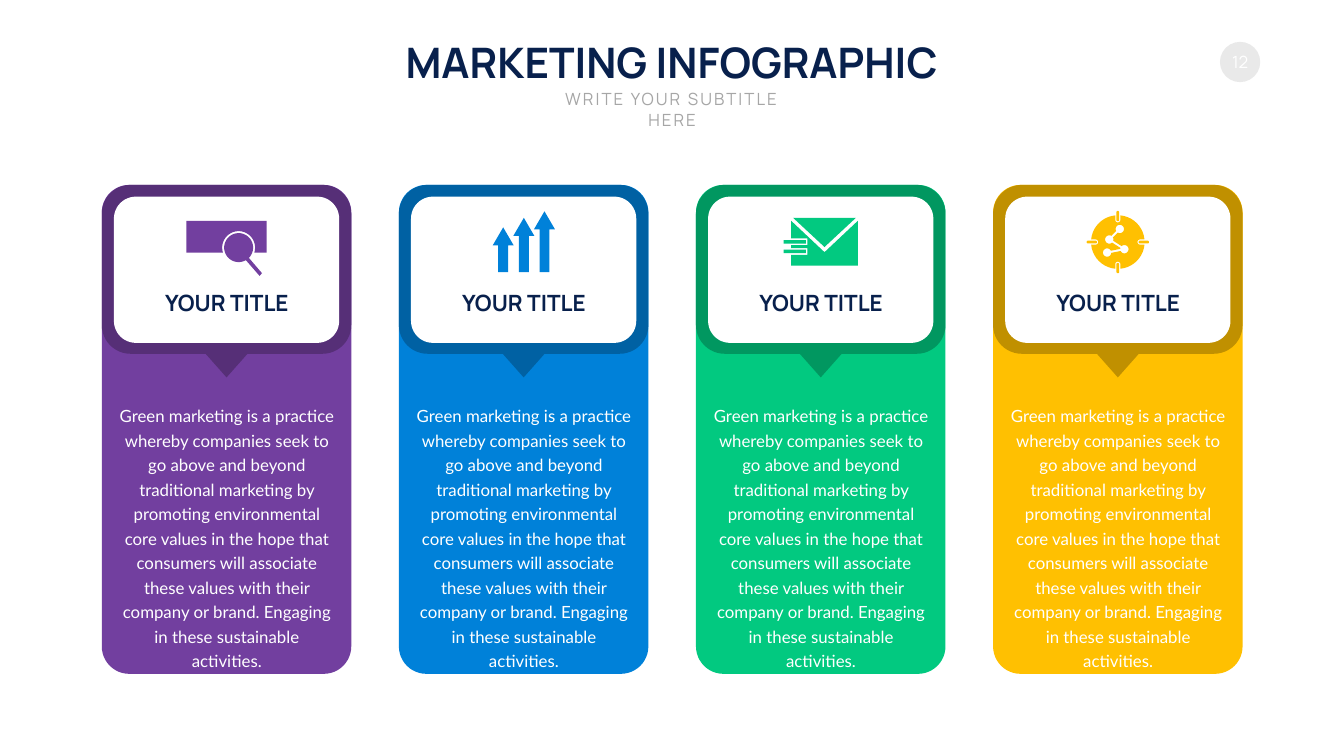
from math import asin, cos, degrees, radians, sin

from pptx import Presentation
from pptx.dml.color import RGBColor
from pptx.enum.shapes import MSO_SHAPE
from pptx.enum.text import MSO_ANCHOR, MSO_AUTO_SIZE, PP_ALIGN
from pptx.util import Cm, Pt

ROUNDED, TRIANGLE, OVAL = MSO_SHAPE.ROUNDED_RECTANGLE, MSO_SHAPE.ISOSCELES_TRIANGLE, MSO_SHAPE.OVAL
TOP, MIDDLE = MSO_ANCHOR.TOP, MSO_ANCHOR.MIDDLE
CENTER = PP_ALIGN.CENTER
GROW = MSO_AUTO_SIZE.SHAPE_TO_FIT_TEXT

THEME = {
    "white": "FFFFFF",
    "badge": "E9E9E9",
    "cards": [("723F9F", "562F77"), ("0081D9", "0061A3"),
              ("02C980", "019760"), ("FFC001", "C09000")],
    "title": {"name": "Manrope", "size": Pt(60), "bold": True, "color": "08204C"},
    "subtitle": {"name": "Manrope", "size": Pt(24), "bold": False, "color": "A6A6A6"},
    "card_title": {"name": "Manrope", "size": Pt(32), "bold": True, "color": "08204C"},
    "body": {"name": "Lato", "size": Pt(24), "bold": False, "color": "FFFFFF"},
    "number": {"name": "Manrope", "size": Pt(24), "bold": False, "color": "FFFFFF"},
}
BODY = (
    "Green marketing is a practice whereby companies seek to go above and beyond "
    "traditional marketing by promoting environmental core values in the hope that "
    "consumers will associate these values with their company or brand. Engaging in "
    "these sustainable activities."
)
FIRST_LEFT, CARD_PITCH, CARD_WIDTH = 5.13, 14.97, 12.57
ICON_MIDDLE = 12.2


def arc(center_x, center_y, radius, start, end):
    """Points along an arc; degrees run clockwise from the right."""
    steps = max(4, round(abs(end - start) / 8))
    angles = [radians(start + (end - start) * i / steps) for i in range(steps + 1)]
    return [(center_x + radius * cos(a), center_y + radius * sin(a)) for a in angles]


def add_text(box, text, style, wrap, anchor=TOP, line_spacing=None):
    """Add a centred, one-paragraph text box; box is in centimetres."""
    shape = slide.shapes.add_textbox(*map(Cm, box))
    frame = shape.text_frame
    frame_format = {"word_wrap": wrap, "auto_size": GROW, "vertical_anchor": anchor}
    for name, value in frame_format.items():
        setattr(frame, name, value)
    paragraph = frame.paragraphs[0]
    paragraph.alignment = CENTER
    paragraph.line_spacing = line_spacing
    run = paragraph.add_run()
    run.text = text
    for name, value in THEME[style].items():
        if name == "color":
            run.font.color.rgb = RGBColor.from_string(value)
        else:
            setattr(run.font, name, value)
    return run


presentation = Presentation()
presentation.slide_width, presentation.slide_height = Cm(67.72), Cm(38.1)
slide = presentation.slides.add_slide(presentation.slide_layouts[6])

# Panels: kind, left, top, width, height, fill, corner, rotation
panels = [(OVAL, 61.47, 2.11, 2.03, 2.03, THEME["badge"], None, 0)]
for index, (color, dark) in enumerate(THEME["cards"]):
    left = FIRST_LEFT + index * CARD_PITCH
    panels += [
        (ROUNDED, left, 9.32, CARD_WIDTH, 24.64, color, 0.11, 0),
        (ROUNDED, left, 9.32, CARD_WIDTH, 8.51, dark, 0.17, 0),
        (ROUNDED, left + 0.61, 9.91, 11.35, 7.37, THEME["white"], 0.15, 0),
        (TRIANGLE, left + 5.23, 17.83, 2.11, 1.19, dark, None, 180),
    ]
for kind, left, top, width, height, fill, corner, rotation in panels:
    shape = slide.shapes.add_shape(kind, Cm(left), Cm(top), Cm(width), Cm(height))
    shape.shadow.inherit = False
    shape.fill.solid()
    shape.fill.fore_color.rgb = RGBColor.from_string(fill)
    shape.line.fill.background()
    shape.rotation = rotation
    if corner is not None:
        shape.adjustments[0] = corner

# Icon outlines in centimetres around the icon centre
search = [
    arc(0.61, 0.28, 0.73, 60, 405) + [(1.79, 1.57), (1.66, 1.7)],
    [(-2.02, 0.53), (-2.02, -1.07), (2.02, -1.07), (2.02, 0.53)]
    + arc(0.61, 0.28, 0.83, 17.5, -197.5),
]

arrows = []
for column, tip in enumerate((-0.74, -1.22, -1.55)):
    x = -1.03 + 1.04 * column
    neck = tip + 0.91
    arrows.append([(x, tip), (x + 0.53, neck), (x + 0.25, neck), (x + 0.25, 1.52),
                   (x - 0.25, 1.52), (x - 0.25, neck), (x - 0.53, neck)])

envelope = [
    [(-1.39, -1.22), (1.77, -1.22), (0.19, 0.25)],
    [(-1.49, -1.07), (0.19, 0.51), (1.87, -1.07), (1.87, 1.19), (-1.49, 1.19),
     (-1.49, 0.64), (-0.67, 0.64), (-0.67, 0.3), (-1.49, 0.3),
     (-1.49, 0.15), (-0.67, 0.15), (-0.67, -0.18), (-1.49, -0.18)],
]
for y in (-0.1, 0.38):
    envelope.append([(-1.87, y), (-0.75, y), (-0.75, y + 0.18), (-1.87, y + 0.18)])

disc, pins = [], []
notch = degrees(asin(0.13 / 1.35))
for turn in (0, 90, 180, 270):
    x, y = cos(radians(turn)), sin(radians(turn))
    disc += arc(1.12 * x, 1.12 * y, 0.13, turn - 90, turn - 270)
    disc += arc(0, 0, 1.35, turn + notch, turn + 90 - notch)
    pins.append(arc(1.5 * x, 1.5 * y, 0.07, turn - 90, turn + 90)
                + arc(1.12 * x, 1.12 * y, 0.07, turn + 90, turn + 270))
# Linked nodes, walked around once as a hole in the disc
network = []
for x, y, start, end in [(0.1, -0.66, 150, 480), (-0.43, -0.13, -30, 18),
                         (0.33, 0.36, 228, 514), (-0.54, 0.53, 4, 334),
                         (0.33, 0.36, 184, 198), (-0.43, -0.13, 48, 300)]:
    network += arc(x, y, 0.21, start, end)
target = [disc, network, *pins]

# Icons and card text
for index, icon in enumerate((search, arrows, envelope, target)):
    left = FIRST_LEFT + index * CARD_PITCH
    center = left + CARD_WIDTH / 2
    builder = None
    for outline in icon:
        points = [(Cm(center + x), Cm(ICON_MIDDLE + y)) for x, y in outline]
        if builder is None:
            builder = slide.shapes.build_freeform(*points[0])
        else:
            builder.move_to(*points[0])
        builder.add_line_segments(points[1:], close=True)
    shape = builder.convert_to_shape()
    shape.shadow.inherit = False
    shape.fill.solid()
    shape.fill.fore_color.rgb = RGBColor.from_string(THEME["cards"][index][0])
    shape.line.fill.background()
    add_text((left + 2.9, 14.45, 6.81, 1.63), "YOUR TITLE", "card_title", False, MIDDLE)
    add_text((left + 0.61, 20.12, 11.38, 12.6), BODY, "body", True, line_spacing=Pt(35))

# Heading and page number
add_text((19.58, 1.7, 28.52, 2.82), "MARKETING INFOGRAPHIC", "title", False)
subtitle = add_text((26.97, 4.37, 13.79, 1.27), "WRITE YOUR SUBTITLE HERE", "subtitle", True)
subtitle._r.get_or_add_rPr().set("spc", "300")
add_text((61.47, 2.5, 2.03, 1.27), "12", "number", False, MIDDLE)

presentation.save("out.pptx")
